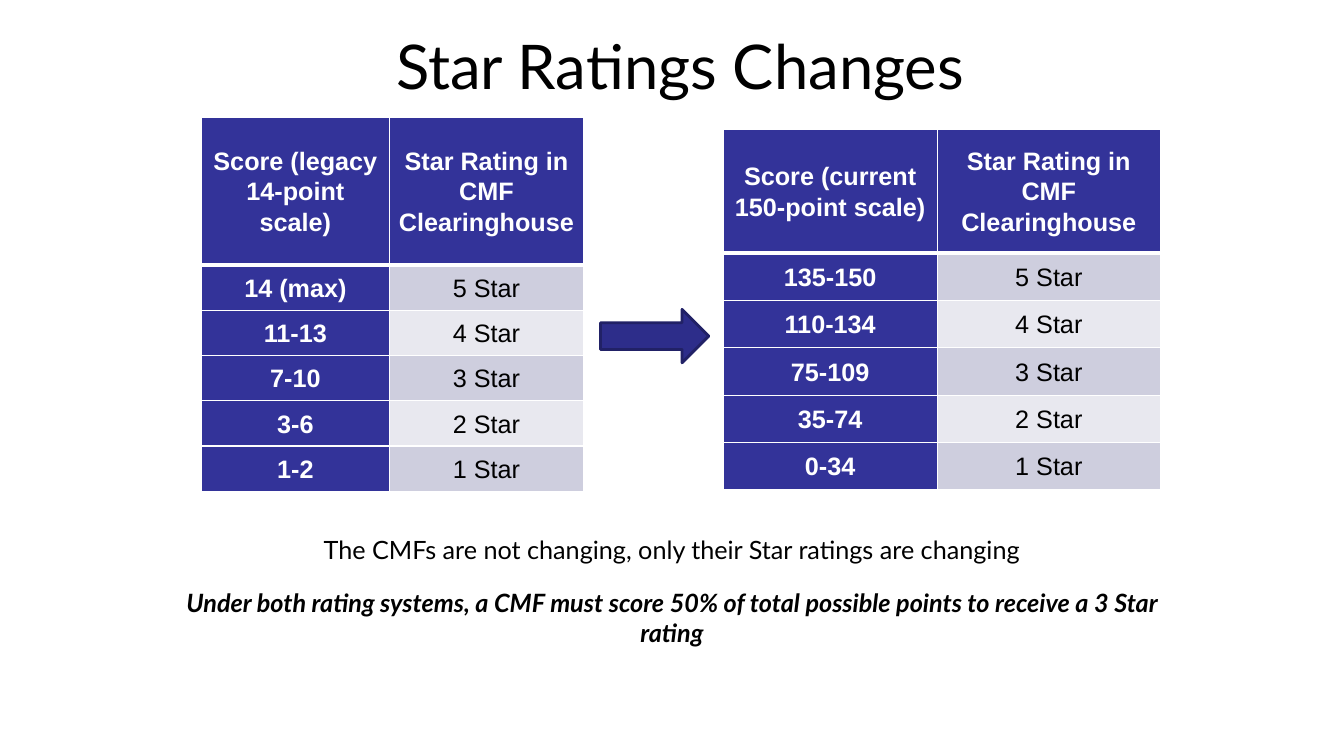
"""Build the slide comparing legacy and current star ratings."""
from dataclasses import dataclass

from lxml import etree
from pptx import Presentation, util as u
from pptx.dml.color import RGBColor
from pptx.enum import shapes, text
from pptx.oxml.ns import qn

INDIGO, WHITE, BLACK = "333399", "FFFFFF", "000000"
BANDS = ("CECEDE", "E8E8EF")
STARS = [f"{count} Star" for count in range(5, 0, -1)]


@dataclass
class RatingTable:
    left: float
    top: float
    columns: tuple[float, float]
    header_height: float
    row_height: float
    heading: str
    scores: list[str]


@dataclass
class Note:
    top: float
    height: float
    wording: str
    emphasis: bool


TABLES = [
    RatingTable(516.4, 92.3, (153.2, 159.2), 88.6, 33.8, "Score (current 150-point scale)",
                ["135-150", "110-134", "75-109", "35-74", "0-34"]),
    RatingTable(144, 83.8, (134, 139), 105.6, 32.3, "Score (legacy 14-point scale)",
                ["14 (max)", "11-13", "7-10", "3-6", "1-2"]),
]
NOTES = [
    Note(378, 29, "The CMFs are not changing, only their Star ratings are changing", False),
    Note(416, 51, "Under both rating systems, a CMF must score 50% of total possible "
                  "points to receive a 3 Star rating", True),
]


def color(value: str) -> RGBColor:
    return RGBColor.from_string(value)


def write(frame, wording: str, font: str, size: float, ink: str = BLACK,
          bold: bool = False, italic: bool = False):
    para = frame.paragraphs[0]
    para.alignment = text.PP_ALIGN.CENTER
    span = para.add_run()
    span.text = wording
    span.font.name, span.font.size = font, u.Pt(size)
    span.font.bold, span.font.italic = bold, italic
    span.font.color.rgb = color(ink)
    return para


def add_border(cell, side: str, width: float) -> None:
    line = etree.SubElement(cell._tc.get_or_add_tcPr(), qn(f"a:ln{side}"), w=str(u.Pt(width)))
    fill = etree.SubElement(line, qn("a:solidFill"))
    etree.SubElement(fill, qn("a:srgbClr"), val=WHITE)


def fill_cell(cell, wording: str, row: int, column: int) -> None:
    dark = row == 0 or column == 0
    for side in "LRTB":
        under_header = (row, side) in ((0, "B"), (1, "T"))
        add_border(cell, side, 3 if under_header else 1)
    cell.fill.solid()
    cell.fill.fore_color.rgb = color(INDIGO if dark else BANDS[(row - 1) % 2])
    cell.margin_left = cell.margin_right = u.Pt(4.5)
    cell.margin_top = cell.margin_bottom = 0
    cell.vertical_anchor = text.MSO_ANCHOR.MIDDLE
    para = write(cell.text_frame, wording, "Arial", 18, WHITE if dark else BLACK, dark)
    para.line_spacing = 1.07


def add_rating_table(page, rating: RatingTable) -> None:
    entries = [(rating.heading, "Star Rating in CMF Clearinghouse"), *zip(rating.scores, STARS)]
    heights = [rating.header_height] + [rating.row_height] * len(rating.scores)
    table = page.shapes.add_table(
        len(entries), 2, u.Pt(rating.left), u.Pt(rating.top),
        u.Pt(sum(rating.columns)), u.Pt(sum(heights))).table
    for column, width in enumerate(rating.columns):
        table.columns[column].width = u.Pt(width)
    for row, (height, entry) in enumerate(zip(heights, entries)):
        table.rows[row].height = u.Pt(height)
        for column, wording in enumerate(entry):
            fill_cell(table.cell(row, column), wording, row, column)


def add_arrow(page) -> None:
    arrow = page.shapes.add_shape(shapes.MSO_SHAPE.RIGHT_ARROW,
                                  u.Pt(429), u.Pt(221), u.Pt(77.3), u.Pt(38.2))
    arrow.shadow.inherit = False
    arrow.fill.solid()
    arrow.fill.fore_color.rgb = color("2D2D8A")
    arrow.line.color.rgb = color("212166")
    arrow.line.width = u.Pt(2)


def add_note(page, note: Note) -> None:
    box = page.shapes.add_textbox(u.Pt(120), u.Pt(note.top), u.Pt(720), u.Pt(note.height))
    box.text_frame.word_wrap = True
    box.text_frame.auto_size = text.MSO_AUTO_SIZE.SHAPE_TO_FIT_TEXT
    write(box.text_frame, note.wording, "Lato", 18, bold=note.emphasis, italic=note.emphasis)


def add_title(page) -> None:
    title = page.shapes.title
    title.left, title.top, title.width, title.height = map(u.Pt, (144, 12, 684, 68.4))
    title.text_frame.vertical_anchor = text.MSO_ANCHOR.MIDDLE
    write(title.text_frame, "Star Ratings Changes", "Lato", 44)


def main() -> None:
    deck = Presentation()
    deck.slide_width, deck.slide_height = u.Pt(960), u.Pt(540)
    page = deck.slides.add_slide(deck.slide_layouts.get_by_name("Title Only"))
    add_title(page)
    for rating in TABLES:
        add_rating_table(page, rating)
    add_arrow(page)
    for note in NOTES:
        add_note(page, note)
    deck.save("out.pptx")


if __name__ == "__main__":
    main()
